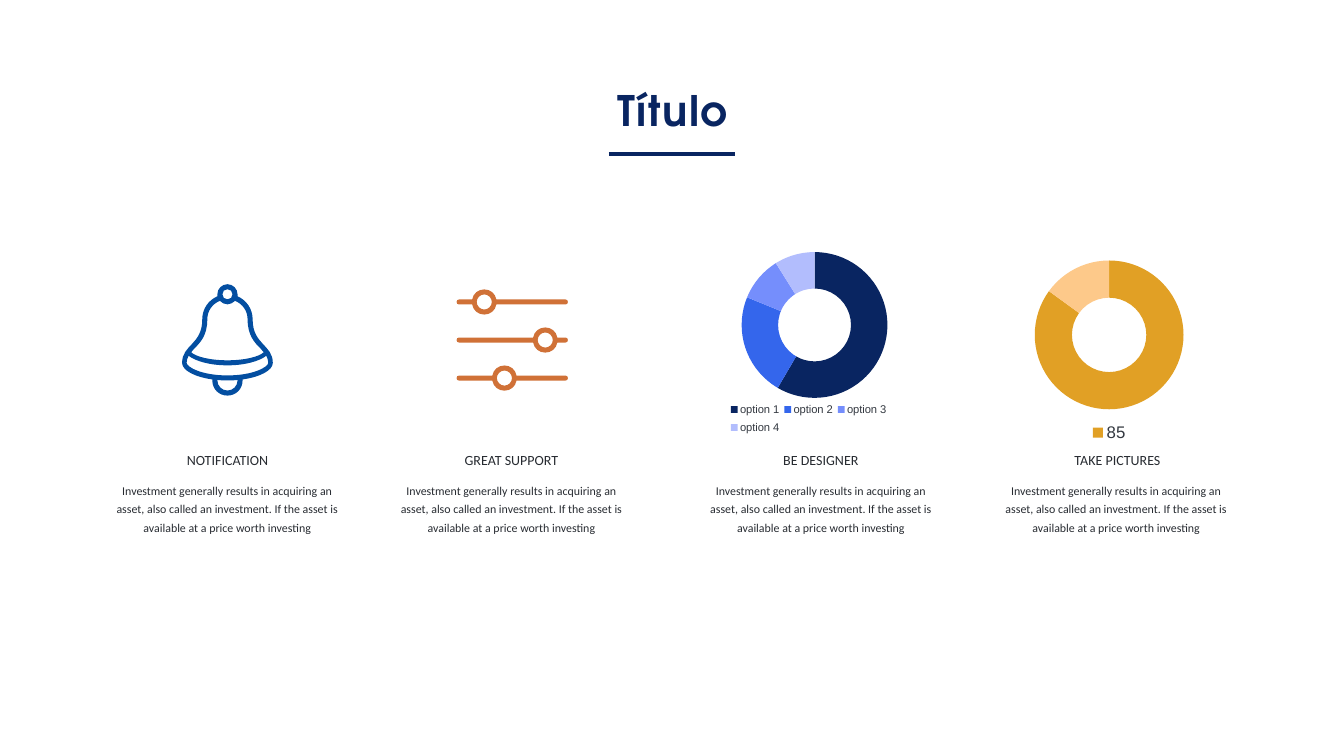
from lxml import etree
from pptx import Presentation
from pptx import util as u
from pptx.chart.data import CategoryChartData
from pptx.dml.color import RGBColor
from pptx.enum import chart as charts, shapes, text
from pptx.oxml import parse_xml
from pptx.oxml.ns import nsdecls, qn

Pt = u.Pt

THEME = {
    "navy": "092561", "blue": "034EA1", "orange": "D07137",
    "ink": "272B31", "legend": "343941",
    "blues": ["092561", "3466EC", "758EFC", "B2BDFD"], "golds": ["E1A025", "FDC98A"],
    "title_font": "TeX Gyre Adventor", "text_font": "Calibri", "chart_font": "Arial",
    "title_size": 60, "label_size": 20, "body_size": 17,
}

TITLE = "Título"
BODY = ("Investment generally results in acquiring an asset, also called an investment. "
        "If the asset is available at a price worth investing")
COLUMNS = [
    ("NOTIFICATION", 325.1, 140.4, 324.7),
    ("GREAT SUPPORT", 730.8, 159.8, 730.8),
    ("BE DESIGNER", 1172.9, 129.6, 1172.9),
    ("TAKE PICTURES", 1596.6, 149, 1594.8),
]
DOUGHNUTS = [
    {"box": (1017.4, 343.4, 281.5, 284.4), "colors": THEME["blues"], "legend_size": 16,
     "values": {"option 1": 59, "option 2": 23, "option 3": 10, "option 4": 9}, "hidden": [],
     "plot": (0.15, 0.05, 0.74, 0.75), "legend": (0.07, 0.79, 0.84, 0.21)},
    {"box": (1426.3, 362.2, 316.8, 274.3), "colors": THEME["golds"], "legend_size": 24,
     "values": {"85": 85, "two": 15}, "hidden": [1], "plot": None, "legend": None},
]

ICON_UNIT = 0.72
BELL_ORIGIN = (325, 406)
BELL_HALVES = [
    [[(0, 0)], [(11, 0), (20, 9), (20, 20)], [(20, 21), (20, 23), (20, 24)],
     [(38, 32), (50, 49), (50, 70)], [(50, 120), (90, 120), (90, 156)],
     [(90, 171), (65, 184), (30, 189)], [(30, 189), (30, 190), (30, 191)],
     [(30, 208), (17, 221), (0, 221)]],
    [[(0, 10)], [(6, 10), (10, 14), (10, 20)], [(10, 26), (6, 30), (0, 30)]],
    [[(0, 40)], [(6, 40), (11, 37), (15, 33)], [(30, 39), (40, 53), (40, 70)],
     [(40, 102), (54, 116), (66, 128)], [(68, 131), (70, 133), (72, 135)],
     [(63, 144), (34, 151), (0, 151)]],
    [[(0, 161)], [(34, 161), (63, 153), (77, 142)], [(79, 146), (81, 150), (81, 156)],
     [(81, 164), (52, 181), (0, 181)]],
    [[(0, 191)], [(7, 191), (13, 191), (20, 190)], [(20, 190), (20, 191), (20, 191)],
     [(20, 202), (11, 211), (0, 211)]],
]

SLIDER_ORIGIN = (655.9, 431.4)
SLIDER_LENGTH, SLIDER_STEP = 211, 75.5
SLIDER_KNOBS = [50, 171, 90]
KNOB_HOLE = [[(0, -15)], [(8, -15), (15, -8), (15, 0)]]


def rgb(value):
    return RGBColor.from_string(value)


def style_font(font, name, size, color, bold=False):
    font.name, font.size, font.bold = name, Pt(size), bold
    font.color.rgb = rgb(color)


def add_text(slide, content, box, name, size, color, spacing, bold=False):
    shape = slide.shapes.add_textbox(*map(Pt, box))
    frame = shape.text_frame
    frame.text = content
    frame.word_wrap = False
    frame.auto_size = text.MSO_AUTO_SIZE.SHAPE_TO_FIT_TEXT
    frame.vertical_anchor = text.MSO_ANCHOR.MIDDLE
    paragraph = frame.paragraphs[0]
    paragraph.alignment = text.PP_ALIGN.CENTER
    paragraph.line_spacing = spacing
    style_font(paragraph.runs[0].font, name, size, color, bold)
    return frame


def add_rule(slide, left, right, y, color, width):
    line = slide.shapes.add_connector(
        shapes.MSO_CONNECTOR.STRAIGHT, Pt(left), Pt(y), Pt(right), Pt(y))
    line.line.color.rgb = rgb(color)
    line.line.width = Pt(width)
    etree.SubElement(line._element.spPr, qn("a:effectLst"))


def scaled(contour, x_scale, y_scale):
    return [[(x * x_scale, y * y_scale) for x, y in segment] for segment in contour]


def shifted(contour, dx, dy):
    return [[(x + dx, y + dy) for x, y in segment] for segment in contour]


def backwards(contour):
    points = iter([point for segment in contour for point in segment][::-1])
    sizes = [1] + [len(segment) for segment in contour[:0:-1]]
    return [[next(points) for _ in range(size)] for size in sizes]


def unfold(contour, x_scale, y_scale):
    return contour + backwards(scaled(contour, x_scale, y_scale))[1:]


def add_icon(slide, contours, origin, color):
    builder = None
    for contour in contours:
        points = [(Pt(origin[0] + x * ICON_UNIT), Pt(origin[1] + y * ICON_UNIT))
                  for segment in contour for x, y in segment]
        if builder is None:
            builder = slide.shapes.build_freeform(*points[0], scale=1.0)
        else:
            builder.move_to(*points[0])
        builder.add_line_segments(points[1:], close=True)
    icon = builder.convert_to_shape()
    lines = iter(list(icon._element.iter(qn("a:lnTo"))))
    for contour in contours:
        for segment in contour[1:]:
            steps = [next(lines) for _ in segment]
            if len(steps) == 3:
                curve = etree.Element(qn("a:cubicBezTo"))
                steps[0].addprevious(curve)
                for step in steps:
                    curve.append(step[0])
                    step.getparent().remove(step)
    icon.shadow.inherit = False
    icon.fill.solid()
    icon.fill.fore_color.rgb = rgb(color)
    icon.line.fill.background()


def slider_side(length):
    quarter = [[(0, -25)], [(12, -25), (22, -17), (24, -5)], [(length, -5)],
               [(length + 3, -5), (length + 5, -3), (length + 5, 0)]]
    return unfold(quarter, 1, -1)


def slider_contours():
    contours = []
    for row, knob in enumerate(SLIDER_KNOBS):
        left = scaled(slider_side(knob), -1, 1)
        outline = slider_side(SLIDER_LENGTH - knob) + backwards(left)[1:]
        hole = unfold(unfold(KNOB_HOLE, 1, -1), -1, 1)
        contours += [shifted(part, knob, row * SLIDER_STEP) for part in (outline, hole)]
    return contours


def manual_layout(box, target=""):
    sizes = "".join(f'<c:{key} val="{value}"/>' for key, value in zip("xywh", box))
    return parse_xml(
        f'<c:layout {nsdecls("c")}><c:manualLayout>{target}'
        f'<c:xMode val="edge"/><c:yMode val="edge"/>{sizes}</c:manualLayout></c:layout>')


def add_doughnut(slide, doughnut):
    data = CategoryChartData()
    data.categories = list(doughnut["values"])
    data.add_series("Series 1", list(doughnut["values"].values()))
    chart = slide.shapes.add_chart(
        charts.XL_CHART_TYPE.DOUGHNUT, *map(Pt, doughnut["box"]), data).chart
    chart.has_title = False
    style_font(chart.font, THEME["chart_font"], doughnut["legend_size"], THEME["legend"])
    chart.plots[0].vary_by_categories = True
    for index, color in enumerate(doughnut["colors"]):
        point = chart.plots[0].series[0].points[index]
        point.format.fill.solid()
        point.format.fill.fore_color.rgb = rgb(color)
        point.format.line.fill.background()
    chart.has_legend = True
    legend = chart.legend
    legend.position = charts.XL_LEGEND_POSITION.BOTTOM
    legend.include_in_layout = False
    style_font(legend.font, THEME["chart_font"], doughnut["legend_size"], THEME["legend"])
    position = legend._element.find(qn("c:legendPos"))
    for index in doughnut["hidden"]:
        position.addnext(parse_xml(
            f'<c:legendEntry {nsdecls("c")}><c:idx val="{index}"/>'
            '<c:delete val="1"/></c:legendEntry>'))
    if doughnut["plot"]:
        area = chart._chartSpace.chart.plotArea
        for parent in (area, legend._element):
            for layout in parent.findall(qn("c:layout")):
                parent.remove(layout)
        area.insert(0, manual_layout(doughnut["plot"], '<c:layoutTarget val="inner"/>'))
        position.addnext(manual_layout(doughnut["legend"]))


def main():
    presentation = Presentation()
    presentation.slide_width, presentation.slide_height = Pt(1920.24), Pt(1080)
    slide = presentation.slides.add_slide(presentation.slide_layouts[6])

    title = add_text(slide, TITLE, (874, 118, 174.2, 79.2), THEME["title_font"],
                     THEME["title_size"], THEME["navy"], Pt(70.6), True)
    title.paragraphs[0].runs[0].font._element.set("spc", "200")
    add_rule(slide, 870, 1050, 220.3, THEME["navy"], 6)

    for label, label_center, width, body_center in COLUMNS:
        add_text(slide, label, (label_center - width / 2, 636.5, width, 35.3),
                 THEME["text_font"], THEME["label_size"], THEME["ink"], 1.2)
        body = add_text(slide, BODY, (body_center - 177.1, 676, 354.2, 97.2),
                        THEME["text_font"], THEME["body_size"], THEME["ink"], Pt(26.5))
        body.word_wrap = True
        body.vertical_anchor = text.MSO_ANCHOR.TOP
        body.margin_left = body.margin_right = Pt(17.3)
        body.margin_top = body.margin_bottom = Pt(8.6)

    add_icon(slide, [unfold(half, -1, 1) for half in BELL_HALVES], BELL_ORIGIN, THEME["blue"])
    add_icon(slide, slider_contours(), SLIDER_ORIGIN, THEME["orange"])
    for doughnut in DOUGHNUTS:
        add_doughnut(slide, doughnut)
    presentation.save("out.pptx")


if __name__ == "__main__":
    main()
